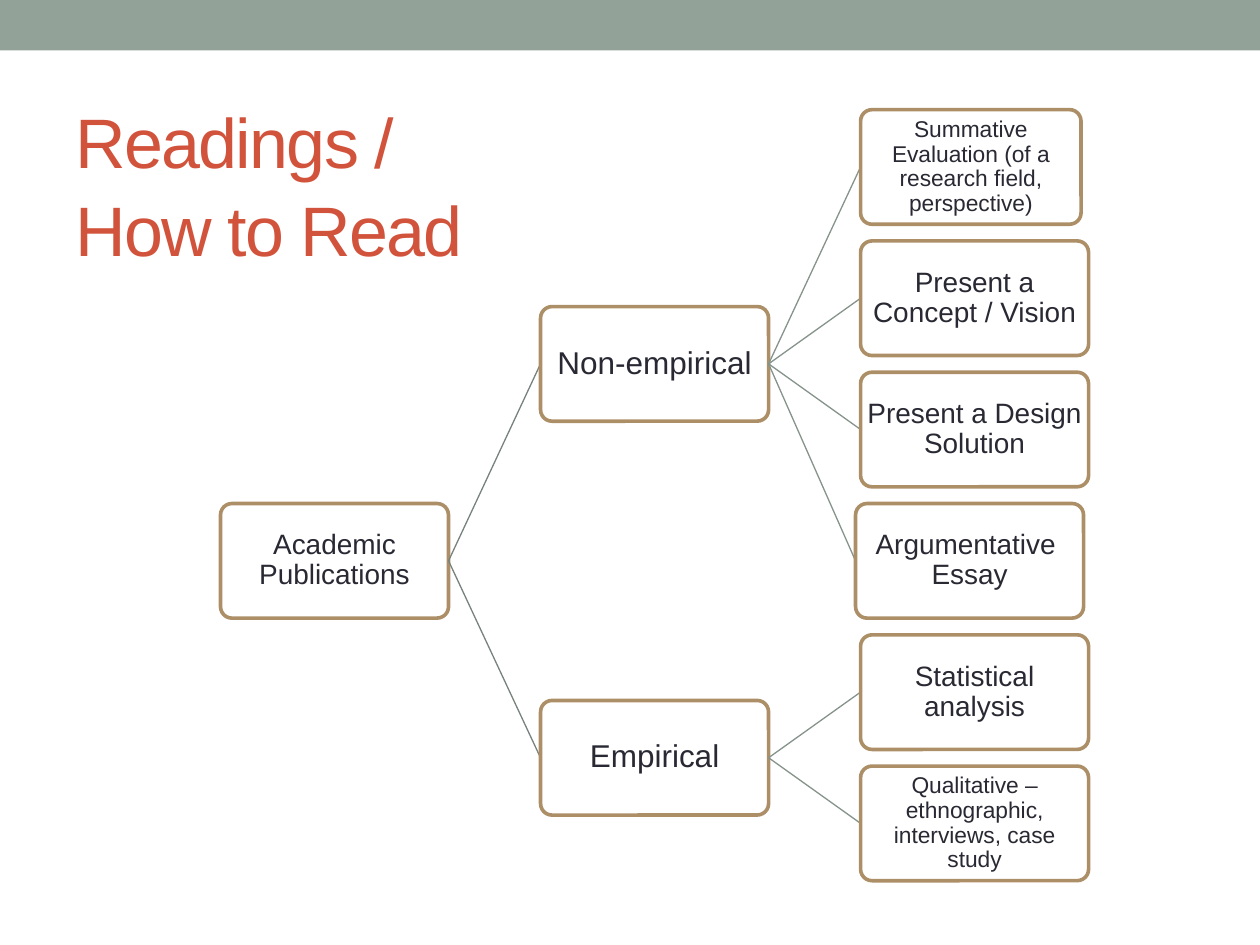
from pptx import Presentation
from pptx.dml.color import RGBColor
from pptx.enum.shapes import MSO_CONNECTOR, MSO_SHAPE
from pptx.enum.text import MSO_ANCHOR, MSO_AUTO_SIZE, PP_ALIGN
from pptx.oxml.ns import qn
from pptx.util import Inches, Pt
from lxml import etree

RECT, ROUND_RECT = MSO_SHAPE.RECTANGLE, MSO_SHAPE.ROUNDED_RECTANGLE
STRAIGHT = MSO_CONNECTOR.STRAIGHT
MIDDLE, CENTER, LEFT = MSO_ANCHOR.MIDDLE, PP_ALIGN.CENTER, PP_ALIGN.LEFT
NO_AUTOFIT = MSO_AUTO_SIZE.NONE

WHITE = RGBColor(0xFF, 0xFF, 0xFF)
SAGE = RGBColor(0x93, 0xA2, 0x99)
RED = RGBColor(0xD2, 0x53, 0x3C)
TAN = RGBColor(0xAD, 0x8F, 0x67)
INK = RGBColor(0x29, 0x29, 0x34)
ROOT_LINK = RGBColor(0x76, 0x82, 0x7B)
BRANCH_LINK = RGBColor(0x85, 0x93, 0x8B)

FONT = "Arial"
BOX_W, BOX_H = 1.81, 0.91
FIRST_TOP, LAST_TOP, ROWS = 0.87, 6.08, 6
ROW_STEP = (LAST_TOP - FIRST_TOP) / (ROWS - 1)
ROOT_LEFT, BRANCH_LEFT, LEAF_LEFT = 1.75, 4.29, 6.83

ROOT = (["Academic Publications"], 16)
BRANCHES = [
    (["Non-empirical"], 18, [
        (["Summative Evaluation (of a research field, perspective)"], 13, LEAF_LEFT, 1.75),
        (["Present a Concept / Vision"], 16, LEAF_LEFT, BOX_W),
        (["Present a Design Solution"], 16, LEAF_LEFT, BOX_W),
        (["Argumentative ", "Essay"], 16, 6.79, BOX_W),
    ]),
    (["Empirical"], 18, [
        (["Statistical analysis"], 16, LEAF_LEFT, BOX_W),
        (["Qualitative – ethnographic, interviews, case study"], 13, LEAF_LEFT, BOX_W),
    ]),
]


def add_lines(p, lines, size, color):
    """Write lines into a paragraph, with a line break between them."""
    for i, line in enumerate(lines):
        if i:
            p.add_line_break()
        r = p.add_run()
        r.text = line
        r.font.name = FONT
        r.font.size = Pt(size)
        r.font.color.rgb = color


def add_band(s):
    """Add the coloured band along the top edge."""
    sp = s.shapes.add_shape(RECT, 0, 0, Inches(10), Inches(0.4))
    sp.shadow.inherit = False
    sp.fill.solid()
    sp.fill.fore_color.rgb = SAGE
    sp.line.fill.background()


def add_title(s, lines):
    """Place and format the title placeholder."""
    sp = s.shapes.title
    sp.left, sp.top, sp.width, sp.height = map(Inches, (0.5, 0.58, 3.69, 1.73))
    tf = sp.text_frame
    tf.auto_size = NO_AUTOFIT
    tf.vertical_anchor = MIDDLE
    p = tf.paragraphs[0]
    p.alignment = LEFT
    p.line_spacing = 1.05
    add_lines(p, lines, 40, RED)
    for r in p.runs:
        r.font._element.set("spc", "-100")


def add_node(s, lines, size, left, row, width=BOX_W):
    """Add a rounded box centred on a row, which may be fractional."""
    top = FIRST_TOP + row * ROW_STEP
    sp = s.shapes.add_shape(ROUND_RECT, Inches(left), Inches(top), Inches(width), Inches(BOX_H))
    sp.adjustments[0] = 0.1
    sp.shadow.inherit = False
    sp.fill.solid()
    sp.fill.fore_color.rgb = WHITE
    sp.line.color.rgb = TAN
    sp.line.width = Pt(2.08)
    tf = sp.text_frame
    tf.word_wrap = True
    tf.vertical_anchor = MIDDLE
    tf.margin_left = tf.margin_right = tf.margin_top = tf.margin_bottom = Inches(0.01)
    p = tf.paragraphs[0]
    p.alignment = CENTER
    p.line_spacing = 0.9
    add_lines(p, lines, size, INK)
    return sp


def add_link(s, parent, left, row, color):
    """Add a line from a parent box to the left edge of a child's place."""
    y = Inches(FIRST_TOP + row * ROW_STEP + BOX_H / 2)
    link = s.shapes.add_connector(
        STRAIGHT, parent.left + parent.width, parent.top + parent.height // 2, Inches(left), y)
    link.line.color.rgb = color
    link.line.width = Pt(0.75)
    etree.SubElement(link._element.spPr, qn("a:effectLst"))


def add_tree(s):
    """Draw the tree, each parent centred on the rows of its children."""
    starts = [0, len(BRANCHES[0][2])]
    rows = [start + (len(leaves) - 1) / 2 for start, (_, _, leaves) in zip(starts, BRANCHES)]
    root = add_node(s, *ROOT, ROOT_LEFT, sum(rows) / len(rows))
    for start, row, (lines, size, leaves) in zip(starts, rows, BRANCHES):
        add_link(s, root, BRANCH_LEFT, row, ROOT_LINK)
        branch = add_node(s, lines, size, BRANCH_LEFT, row)
        for leaf_row, (text, pts, left, width) in enumerate(leaves, start):
            add_link(s, branch, left, leaf_row, BRANCH_LINK)
            add_node(s, text, pts, left, leaf_row, width)


def main():
    """Build the slide and save it."""
    prs = Presentation()
    prs.slide_width, prs.slide_height = Inches(10), Inches(7.5)
    s = prs.slides.add_slide(prs.slide_layouts[5])
    add_band(s)
    add_title(s, ["Readings /", "How to Read"])
    add_tree(s)
    prs.save("out.pptx")


if __name__ == "__main__":
    main()
